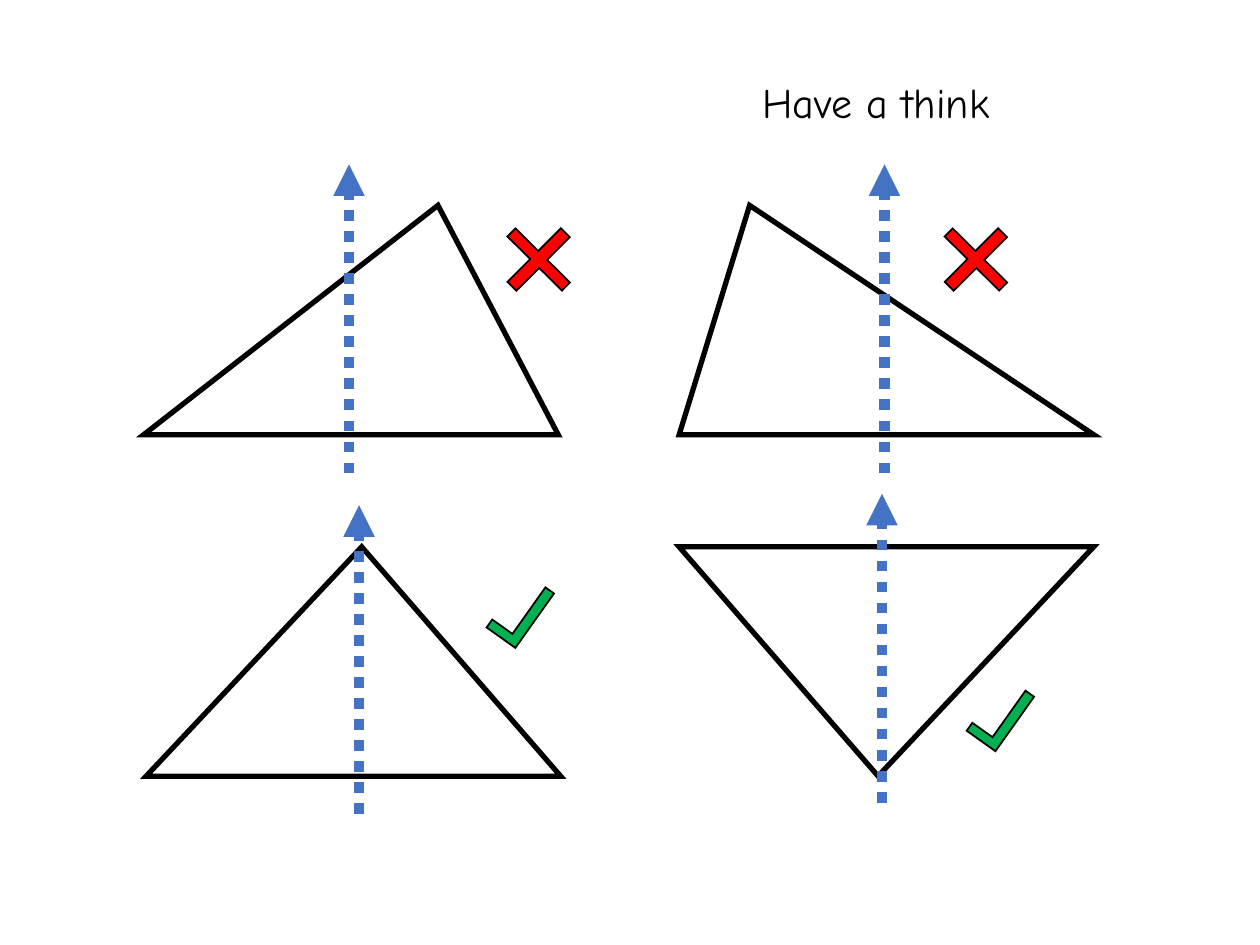
from lxml import etree
from pptx import Presentation
from pptx import util as u
from pptx.dml.color import RGBColor
from pptx.enum import dml, shapes, text
from pptx.oxml import ns

# The slide is a grid of 100 columns by 75 rows of square cells.
SLIDE_WIDTH, SLIDE_HEIGHT = u.Inches(10), u.Inches(7.5)
COLUMNS = 100
CELL = SLIDE_WIDTH / COLUMNS

BLACK = RGBColor(0x00, 0x00, 0x00)
WHITE = RGBColor(0xFF, 0xFF, 0xFF)
BLUE = RGBColor(0x44, 0x72, 0xC4)
RED = RGBColor(0xFF, 0x00, 0x00)
GREEN = RGBColor(0x00, 0xB0, 0x50)
FONT = "Comic Neue"

TRIANGLE_SIZE = (32.9, 18.2)
AXIS_HEIGHT = 24.5
CROSS_SIZE = (6.1, 6)
TICK_SIZE = (2.8, 5.3)
TOP_ROW, BOTTOM_ROW = 16.3, 43.4


def cells(*counts):
    return [u.Emu(round(count * CELL)) for count in counts]


def write_text(shape, content, *, size, color, font=FONT,
               align=text.PP_ALIGN.LEFT, anchor=text.MSO_ANCHOR.TOP):
    frame = shape.text_frame
    frame.word_wrap = True
    frame.auto_size = text.MSO_AUTO_SIZE.SHAPE_TO_FIT_TEXT
    frame.vertical_anchor = anchor
    paragraph = frame.paragraphs[0]
    paragraph.text = content
    paragraph.alignment = align
    run_font = paragraph.runs[0].font
    run_font.name, run_font.size = font, u.Pt(size)
    run_font.color.rgb = color


def add_title(slide, content):
    title = slide.shapes.title
    title.left, title.top, title.width, title.height = cells(59.5, 5.6, 23.6, 5)
    write_text(title, content, size=24, color=BLACK)


def add_outlined(slide, kind, position, size, adjustments, *, fill, line_width, rotation=0):
    shape = slide.shapes.add_shape(kind, *cells(*position, *size))
    for index, value in enumerate(adjustments):
        shape.adjustments[index] = value
    shape.rotation = rotation
    shape.shadow.inherit = False
    shape.fill.solid()
    shape.fill.fore_color.rgb = fill
    shape.line.color.rgb = BLACK
    shape.line.width = u.Pt(line_width)
    line = shape.element.spPr.find(ns.qn("a:ln"))
    etree.SubElement(line, ns.qn("a:miter"), lim="800000")
    return shape


def add_triangle(slide, left, top, apex, rotation=0):
    """Apex is its share of the way along the base."""
    add_outlined(slide, shapes.MSO_SHAPE.ISOSCELES_TRIANGLE, (left, top), TRIANGLE_SIZE,
                 [apex], fill=WHITE, line_width=3, rotation=rotation)


def add_axis(slide, column, top):
    """Dotted mirror line with its arrowhead at the top."""
    axis = slide.shapes.add_connector(
        shapes.MSO_CONNECTOR.STRAIGHT, *cells(column, top + AXIS_HEIGHT, column, top))
    axis.line.color.rgb = BLUE
    axis.line.width = u.Pt(6)
    axis.line.dash_style = dml.MSO_LINE.ROUND_DOT
    line = axis.element.spPr.find(ns.qn("a:ln"))
    line.find(ns.qn("a:prstDash")).set("val", "sysDot")
    etree.SubElement(line, ns.qn("a:tailEnd"), type="triangle")
    etree.SubElement(axis.element.spPr, ns.qn("a:effectLst"))


def add_cross(slide, left, top):
    add_outlined(slide, shapes.MSO_SHAPE.CROSS, (left, top), CROSS_SIZE, [0.425],
                 fill=RED, line_width=1, rotation=44.8)


def add_tick(slide, left, top):
    tick = add_outlined(slide, shapes.MSO_SHAPE.CORNER, (left, top), TICK_SIZE,
                        [0.276, 0.299], fill=GREEN, line_width=1, rotation=35.4)
    tick.element.spPr.find(ns.qn("a:xfrm")).set("flipH", "1")


def main():
    presentation = Presentation()
    presentation.slide_width, presentation.slide_height = SLIDE_WIDTH, SLIDE_HEIGHT
    slide = presentation.slides.add_slide(presentation.slide_layouts[5])
    add_title(slide, "Have a think")

    # Triangle (left, top, apex, rotation), then its axis (column, top).
    figures = [
        ((11.4, TOP_ROW, 0.71), (27.7, 13.05)),
        ((53.9, TOP_ROW, 0.17), (70.2, 13.05)),
        ((11.6, BOTTOM_ROW, 0.52), (28.5, 40.1)),
        ((53.9, BOTTOM_ROW, 0.52, 180), (70, 39.2)),
    ]
    for triangle, axis in figures:
        add_triangle(slide, *triangle)
        add_axis(slide, *axis)

    for left in (39.7, 74.4):
        add_cross(slide, left, 17.6)
    for position in ((39.9, 45.8), (78, 54)):
        add_tick(slide, *position)

    presentation.save("out.pptx")


if __name__ == "__main__":
    main()
